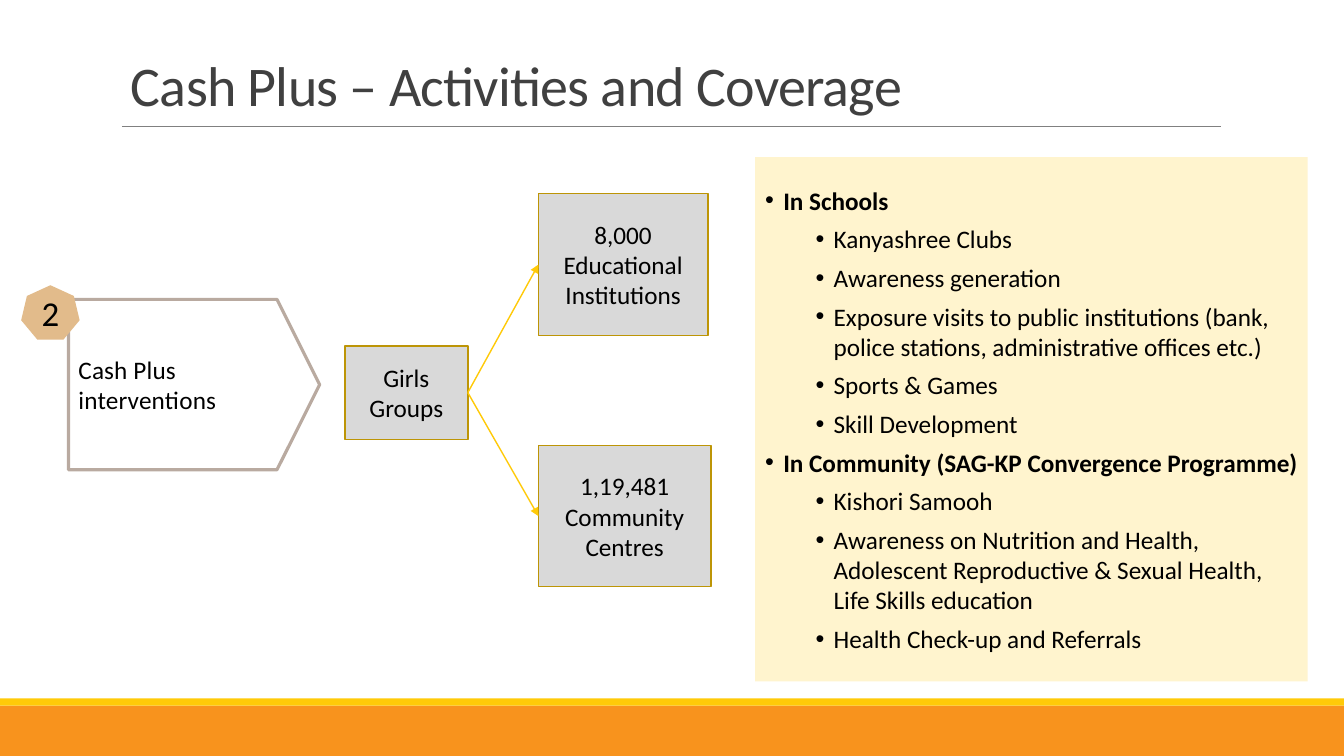
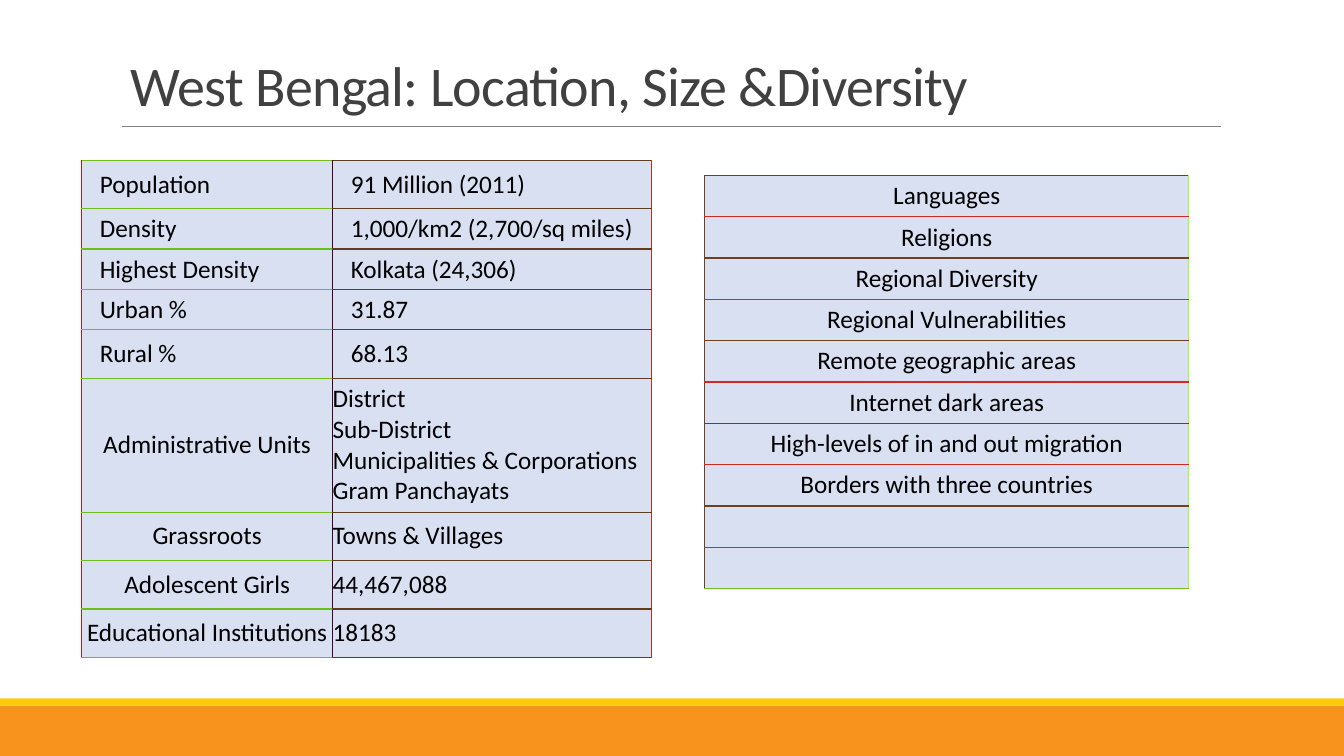
"""Build two slides on the Cash Plus programme and the profile of West Bengal."""
from lxml.etree import SubElement
from pptx import Presentation
from pptx.dml.color import RGBColor
from pptx.enum.shapes import MSO_CONNECTOR as Connector, MSO_SHAPE as Shape
from pptx.enum.text import MSO_ANCHOR as Anchor, PP_ALIGN as Align
from pptx.oxml.ns import qn
from pptx.util import Inches, Pt

COLORS = {
    "orange": "F8931D", "yellow": "FFCA08", "rule": "808080", "title": "404040",
    "black": "000000", "taupe": "B9AAA0", "tan": "E2BB8B", "grey": "D9D9D9",
    "gold": "BD9506", "cream": "FFF4CE", "cell": "D9E0F2", "crimson": "B0211D",
    "green": "70BE1C", "maroon": "400421", "brown": "603B21", "rust": "A03B21",
    "umber": "70401D", "red": "D02B1D", "lime": "A0FB20",
}
BODY = {"name": "Calibri", "size": Pt(18), "bold": False}
HEADING = {**BODY, "bold": True}
TITLE = {**BODY, "size": Pt(40)}
BADGE = {**BODY, "size": Pt(24.9)}

ACTIVITIES = {
    "In Schools": [
        "Kanyashree Clubs",
        "Awareness generation",
        "Exposure visits to public institutions (bank, police stations, "
        "administrative offices etc.)",
        "Sports & Games",
        "Skill Development",
    ],
    "In Community (SAG-KP Convergence Programme)": [
        "Kishori Samooh",
        "Awareness on Nutrition and Health, Adolescent Reproductive & Sexual "
        "Health, Life Skills education",
        "Health Check-up and Referrals",
    ],
}
INDENTED_FACTS = [
    ("Population", "91 Million (2011)"),
    ("Density", "1,000/km2 (2,700/sq miles)"),
    ("Highest Density", "Kolkata (24,306)"),
    ("Urban %", "31.87"),
    ("Rural %", "68.13"),
]
CENTRED_FACTS = [
    ("Administrative Units",
     "District\nSub-District\nMunicipalities & Corporations\nGram Panchayats"),
    ("Grassroots", "Towns & Villages"),
    ("Adolescent Girls", "44,467,088"),
    ("Educational Institutions", "18183"),
]
FACT_HEIGHTS = [0.48, 0.4, 0.4, 0.4, 0.48, 1.33, 0.48, 0.48, 0.48]
DIVERSITY = [
    "Languages", "Religions", "Regional Diversity", "Regional Vulnerabilities",
    "Remote geographic areas", "Internet dark areas",
    "High-levels of in and out migration", "Borders with three countries", "", "",
]


def rgb(color):
    return RGBColor.from_string(COLORS[color])


def set_values(target, values):
    for name, value in values.items():
        setattr(target, name, value)


def write(para, text, style=BODY, color="black", align=Align.LEFT, tracking=0):
    para.alignment = align
    span = para.add_run()
    span.text = text
    set_values(span.font, style)
    span.font.color.rgb = rgb(color)
    if tracking:
        span.font._element.set("spc", str(tracking))


def write_lines(frame, text, **options):
    for index, line in enumerate(text.split("\n")):
        para = frame.add_paragraph() if index else frame.paragraphs[0]
        write(para, line, **options)


def add_box(page, kind, place, fill=None, line=None, width=1.25):
    box = page.shapes.add_shape(kind, *map(Inches, place))
    box.shadow.inherit = False
    if fill:
        box.fill.solid()
        box.fill.fore_color.rgb = rgb(fill)
    else:
        box.fill.background()
    if line:
        box.line.color.rgb = rgb(line)
        box.line.width = Pt(width)
    else:
        box.line.fill.background()
    set_values(box.text_frame, {"word_wrap": True, "vertical_anchor": Anchor.MIDDLE})
    return box


def add_line(page, color, width, points=(0, 0, 0, 0)):
    line = page.shapes.add_connector(Connector.STRAIGHT, *map(Inches, points))
    line.line.color.rgb = rgb(color)
    line.line.width = Pt(width)
    SubElement(line._element.spPr, qn("a:effectLst"))
    return line


def add_arrow(page, source, target):
    arrow = add_line(page, "yellow", 1)
    arrow.begin_connect(source, 3)
    arrow.end_connect(target, 1)
    SubElement(arrow.line._get_or_add_ln(), qn("a:tailEnd"), type="triangle")


def add_page(deck, title):
    page = deck.slides.add_slide(deck.slide_layouts[6])
    add_box(page, Shape.RECTANGLE, (0, 7, 13.33, 0.5), "orange")
    add_box(page, Shape.RECTANGLE, (0, 6.93, 13.33, 0.07), "yellow")
    add_line(page, "rule", 0.5, (1.21, 1.25, 12.11, 1.25))
    box = page.shapes.add_textbox(*map(Inches, (1.2, 0.36, 11, 0.86)))
    set_values(box.text_frame, {"word_wrap": True, "vertical_anchor": Anchor.BOTTOM})
    para = box.text_frame.paragraphs[0]
    para.line_spacing = 0.85
    write(para, title, TITLE, "title", tracking=-50)
    return page


def add_group(page, place, text):
    box = add_box(page, Shape.RECTANGLE, place, "grey", "gold")
    write_lines(box.text_frame, text, align=Align.CENTER)
    return box


def add_bullet(para, text, level):
    para.level = level
    para.space_after = Pt(6)
    write(para, text, BODY if level else HEADING)
    properties = para._p.get_or_add_pPr()
    properties.set("marL", str(Inches(0.18 + 0.5 * level)))
    properties.set("indent", str(Inches(-0.18)))
    SubElement(properties, qn("a:buFont"), typeface="Arial")
    SubElement(properties, qn("a:buChar"), char="•")


def add_activities(page):
    panel = add_box(page, Shape.RECTANGLE, (7.49, 1.56, 5.48, 5.2), "cream")
    frame = panel.text_frame
    entries = [
        (text, level)
        for heading, items in ACTIVITIES.items()
        for text, level in [(heading, 0), *((item, 1) for item in items)]
    ]
    for index, (text, level) in enumerate(entries):
        para = frame.add_paragraph() if index else frame.paragraphs[0]
        add_bullet(para, text, level)


def add_grid(page, place, widths, heights):
    frame = page.shapes.add_table(
        len(heights), len(widths), *map(Inches, (*place, sum(widths), sum(heights))))
    table = frame.table
    set_values(table, {"first_row": False, "horz_banding": False})
    for column, width in zip(table.columns, widths):
        column.width = Inches(width)
    for row, height in zip(table.rows, heights):
        row.height = Inches(height)
    return table


def fill_cell(cell, text, borders, inset=0, align=Align.LEFT):
    set_values(cell, {
        "margin_left": Inches(inset), "margin_right": 0,
        "margin_top": Inches(0.05), "margin_bottom": Inches(0.05),
        "vertical_anchor": Anchor.MIDDLE,
    })
    properties = cell._tc.get_or_add_tcPr()
    for side, color in zip("LRTB", borders):
        edge = SubElement(properties, qn(f"a:ln{side}"), w=str(Pt(1)))
        paint = SubElement(edge, qn("a:solidFill"))
        SubElement(paint, qn("a:srgbClr"), val=COLORS[color])
    cell.fill.solid()
    cell.fill.fore_color.rgb = rgb("cell")
    if text:
        write_lines(cell.text_frame, text, align=align)


def add_facts(page):
    table = add_grid(page, (0.81, 1.59), (2.49, 3.16), FACT_HEIGHTS)
    for row, (label, value) in enumerate(INDENTED_FACTS + CENTRED_FACTS):
        indented = row < len(INDENTED_FACTS)
        inset = 0.18 if indented else 0
        fill_cell(table.cell(row, 0), label, ("crimson", "maroon", "green", "green"),
                  inset, Align.LEFT if indented else Align.CENTER)
        fill_cell(table.cell(row, 1), value, ("maroon", "rust", "brown", "brown"), inset)


def add_diversity(page):
    table = add_grid(page, (6.99, 1.74), (4.8,), [0.41] * len(DIVERSITY))
    edges = ["umber", "red"] * (len(DIVERSITY) // 2) + ["green"]
    for row, text in enumerate(DIVERSITY):
        fill_cell(table.cell(row, 0), text, ("umber", "lime", edges[row], edges[row + 1]),
                  align=Align.CENTER)


def add_coverage_page(deck):
    page = add_page(deck, "Cash Plus – Activities and Coverage")
    banner = add_box(page, Shape.PENTAGON, (0.68, 2.97, 2.49, 1.69), None, "taupe", 2.25)
    banner.adjustments[0] = 0.25
    write_lines(banner.text_frame, "Cash Plus interventions", tracking=10)
    badge = add_box(page, Shape.HEPTAGON, (0.21, 2.83, 0.58, 0.54), "tan")
    write_lines(badge.text_frame, "2", style=BADGE, align=Align.CENTER)
    schools = add_group(page, (5.34, 1.92, 1.68, 1.41), "8,000\nEducational Institutions")
    centres = add_group(page, (5.34, 4.42, 1.71, 1.4), "1,19,481\nCommunity Centres")
    girls = add_group(page, (3.42, 3.43, 1.22, 0.93), "Girls Groups")
    for target in (schools, centres):
        add_arrow(page, girls, target)
    add_activities(page)


def add_profile_page(deck):
    page = add_page(deck, "West Bengal: Location, Size &Diversity")
    add_facts(page)
    add_diversity(page)


def main():
    deck = Presentation()
    set_values(deck, {"slide_width": Inches(13.33), "slide_height": Inches(7.5)})
    add_coverage_page(deck)
    add_profile_page(deck)
    deck.save("out.pptx")


if __name__ == "__main__":
    main()
